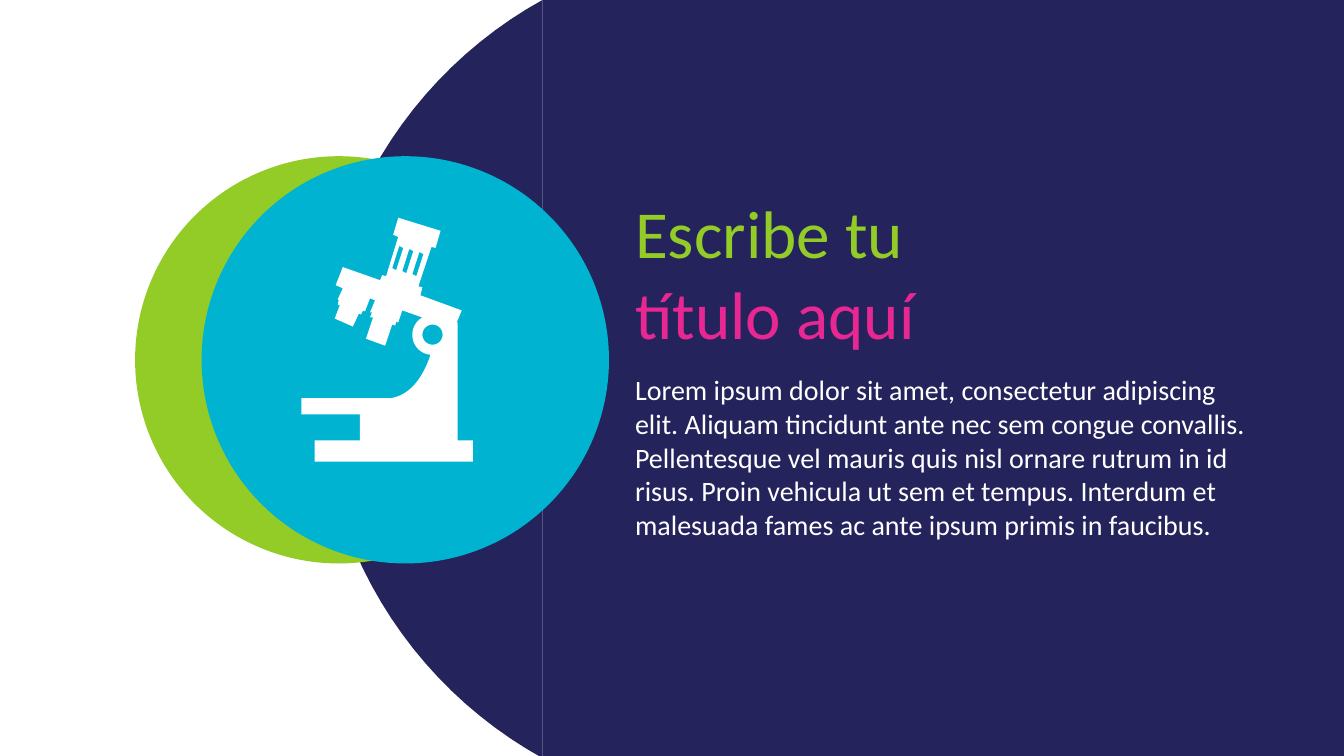
import math

import pptx
import pptx.dml.color
import pptx.enum.shapes
import pptx.enum.text
import pptx.util

Inches = pptx.util.Inches
RGBColor = pptx.dml.color.RGBColor

NAVY = RGBColor(0x24, 0x23, 0x5C)
GREEN = RGBColor(0x93, 0xCB, 0x27)
CYAN = RGBColor(0x00, 0xB3, 0xD0)
PINK = RGBColor(0xE9, 0x27, 0x93)
WHITE = RGBColor(0xFF, 0xFF, 0xFF)

TITLE = [("Escribe tu", GREEN), ("título aquí", PINK)]
BODY = [("Lorem ipsum dolor sit amet, consectetur adipiscing elit. Aliquam tincidunt "
         "ante nec sem congue convallis. Pellentesque vel mauris quis nisl ornare rutrum "
         "in id risus. Proin vehicula ut sem et tempus. Interdum et malesuada fames ac "
         "ante ipsum primis in faucibus.", WHITE)]

# Outlines in inches: two numbers are a corner, six are a Bezier curve.
BOTTOM = 7.52
NAVY_PANELS = [
    [(13.35, 0), (13.35, BOTTOM), (9.54, BOTTOM),
     (10.86, 6.79, 11.76, 5.38, 11.76, 3.76), (11.76, 2.14, 10.86, 0.73, 9.54, 0)],
    [(10.2, 0), (11.74, 0.73, 12.77, 2.14, 12.77, 3.76),
     (12.77, 5.38, 11.74, 6.79, 10.2, BOTTOM), (5.38, BOTTOM), (5.38, 0)],
    [(5.38, 0), (5.38, BOTTOM), (4.06, 6.79, 3.17, 5.38, 3.17, 3.76),
     (3.17, 2.14, 4.06, 0.73, 5.38, 0)],
]
MICROSCOPE_BODY = [
    (4.54, 4.37), (4.54, 3.2), (4.53, 3.2), (4.58, 3.08), (4.17, 2.93), (4.19, 2.85),
    (4.15, 2.84), (4.28, 2.45), (4.32, 2.46), (4.37, 2.29), (3.95, 2.16), (3.9, 2.33),
    (3.95, 2.35), (3.83, 2.74), (3.79, 2.73), (3.77, 2.78), (3.4, 2.65), (3.33, 2.83),
    (3.4, 2.86), (3.35, 2.97), (3.36, 2.98), (3.35, 3.02), (3.37, 3.03), (3.32, 3.16),
    (3.5, 3.24), (3.56, 3.11), (3.58, 3.12), (3.6, 3.08), (3.62, 3.09), (3.67, 2.96),
    (3.72, 2.98), (3.67, 3.1), (3.69, 3.1), (3.67, 3.15), (3.7, 3.15), (3.63, 3.36),
    (3.82, 3.43), (3.89, 3.22), (3.92, 3.23), (3.93, 3.19), (3.95, 3.2), (3.99, 3.08),
    (4.19, 3.15), (4.13, 3.18, 4.09, 3.25, 4.09, 3.32),
    (4.09, 3.43, 4.17, 3.51, 4.27, 3.52), (4.21, 3.7, 4.1, 3.91, 3.88, 3.95),
    (2.99, 3.95), (2.99, 4.11), (3.57, 4.11), (3.57, 4.37), (3.12, 4.37), (3.12, 4.58),
    (4.69, 4.58), (4.69, 4.37),
]
EYEPIECE_SLIT = [(3.96, 2.44), (4, 2.46), (3.93, 2.68), (3.89, 2.66)]
SLIT_STEP = (0.1, 0.03)
KNOB_X, KNOB_Y, KNOB_RADIUS = 4.29, 3.32, 0.1

CIRCLE_TOP, CIRCLE_SIZE = 1.55, 4.04
CURVE_STEPS = 24


def flatten(outline):
    """Turn the curves of an outline into short straight steps."""
    points = [outline[0]]
    for part in outline[1:]:
        if len(part) == 2:
            points.append(part)
            continue
        x0, y0 = points[-1]
        x1, y1, x2, y2, x3, y3 = part
        for step in range(1, CURVE_STEPS + 1):
            t = step / CURVE_STEPS
            a, b, c, d = (1 - t) ** 3, 3 * t * (1 - t) ** 2, 3 * t * t * (1 - t), t ** 3
            points.append((a * x0 + b * x1 + c * x2 + d * x3,
                           a * y0 + b * y1 + c * y2 + d * y3))
    return points


def paint(shape, color):
    shape.shadow.inherit = False
    shape.fill.solid()
    shape.fill.fore_color.rgb = color
    shape.line.fill.background()


def add_outline(shapes, outlines, color):
    builder = None
    for outline in outlines:
        start, *rest = [(Inches(x), Inches(y)) for x, y in flatten(outline)]
        if builder is None:
            builder = shapes.build_freeform(*start, scale=1.0)
        else:
            builder.move_to(*start)
        builder.add_line_segments(rest, close=True)
    paint(builder.convert_to_shape(), color)


def add_circle(shapes, left, color):
    circle = shapes.add_shape(pptx.enum.shapes.MSO_SHAPE.OVAL, Inches(left),
                              Inches(CIRCLE_TOP), Inches(CIRCLE_SIZE), Inches(CIRCLE_SIZE))
    paint(circle, color)


def write(frame, lines, size, font="Calibri"):
    frame.word_wrap = True
    frame.auto_size = pptx.enum.text.MSO_AUTO_SIZE.SHAPE_TO_FIT_TEXT
    frame.vertical_anchor = pptx.enum.text.MSO_ANCHOR.TOP
    for index, (text, color) in enumerate(lines):
        paragraph = frame.add_paragraph() if index else frame.paragraphs[0]
        paragraph.alignment = pptx.enum.text.PP_ALIGN.LEFT
        run = paragraph.add_run()
        run.text = text
        run.font.name = font
        run.font.size = pptx.util.Pt(size)
        run.font.color.rgb = color


def main():
    deck = pptx.Presentation()
    deck.slide_width, deck.slide_height = Inches(13.33), Inches(7.5)
    slide = deck.slides.add_slide(deck.slide_layouts[5])
    shapes = slide.shapes

    for panel in NAVY_PANELS:
        add_outline(shapes, [panel], NAVY)
    add_circle(shapes, 1.34, GREEN)

    title = shapes.title
    title.left, title.top = Inches(6.2), Inches(1.85)
    title.width, title.height = Inches(6.57), Inches(1.72)
    write(title.text_frame, TITLE, size=48)
    shapes.element.append(title.element)  # brings the title in front of the navy panels

    body = shapes.add_textbox(Inches(6.2), Inches(3.65), Inches(6.42), Inches(2.12))
    write(body.text_frame, BODY, size=20)

    add_circle(shapes, 2, CYAN)
    slits = [[(x + i * SLIT_STEP[0], y + i * SLIT_STEP[1]) for x, y in EYEPIECE_SLIT]
             for i in range(3)]
    angles = [2 * math.pi * i / 48 for i in range(48)]
    knob = [(KNOB_X + KNOB_RADIUS * math.cos(a), KNOB_Y + KNOB_RADIUS * math.sin(a))
            for a in angles]
    add_outline(shapes, [MICROSCOPE_BODY, *slits, knob], WHITE)

    deck.save("out.pptx")


if __name__ == "__main__":
    main()
